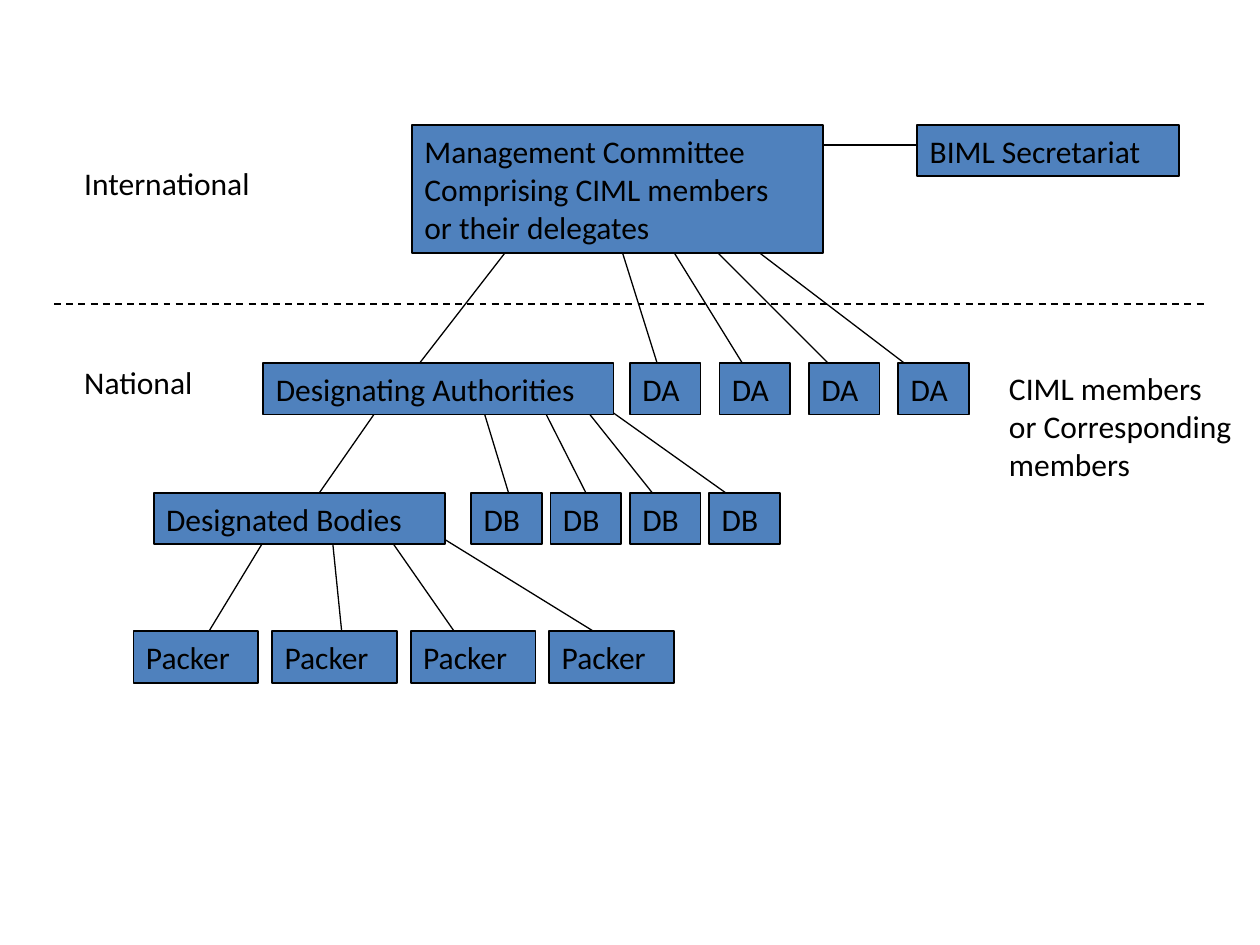
"""Build the organisation chart of international and national bodies."""
from lxml import etree
from pptx import Presentation
from pptx.dml.color import RGBColor
from pptx.enum.dml import MSO_LINE
from pptx.enum.shapes import MSO_CONNECTOR, MSO_SHAPE
from pptx.enum.text import MSO_ANCHOR, PP_ALIGN
from pptx.oxml.ns import qn
from pptx.util import Inches, Pt

STRAIGHT, RECTANGLE = MSO_CONNECTOR.STRAIGHT, MSO_SHAPE.RECTANGLE
DASH, LEFT, TOP, MIDDLE = MSO_LINE.DASH, PP_ALIGN.LEFT, MSO_ANCHOR.TOP, MSO_ANCHOR.MIDDLE

COLORS = {"box": "4F81BD", "ink": "000000"}
FONT, FONT_SIZE = "Calibri", 18
BOX_HEIGHT = 0.41

COMMITTEE = ("Management Committee", "Comprising CIML members", "or their delegates")
LEAD_BOXES = [
    (("Designating Authorities",), 2.09, 2.88, 2.78, BOX_HEIGHT),
    (("Designated Bodies",), 1.22, 3.91, 2.31, BOX_HEIGHT),
    (("BIML Secretariat",), 7.28, 0.99, 2.08, BOX_HEIGHT),
    (COMMITTEE, 3.27, 0.99, 3.26, 1.02),
]
# label, first left, pitch, top, width
BOX_ROWS = [
    ("DA", 5, 0.71, 2.88, 0.56),
    ("DB", 3.74, 0.63, 3.91, 0.56),
    ("Packer", 1.06, 1.1, 5.01, 0.99),
]
ROW_COUNT = 4
LABELS = [
    (("International",), 0.57, 1.25, 1.58, 0.4),
    (("National",), 0.57, 2.83, 1.12, 0.4),
    (("CIML members", "or Corresponding", "members"), 7.91, 2.88, 2.2, 1),
]
SECRETARIAT_LINK = (6.42, 1.15, 7.36, 1.15)
BORDER = (0.43, 2.41, 9.57, 2.41)
# upper y, lower y, (upper x, lower x) of each branch
BRANCHES = [
    (4.3, 5.09, [(2.09, 1.61), (2.64, 2.72), (3.11, 3.66)]),
    (4.22, 5.09, [(3.43, 4.84)]),
    (3.2, 3.99, [(3.03, 2.48), (3.82, 4.06), (4.29, 4.69), (4.61, 5.24), (4.76, 5.87)]),
    (1.94, 2.96, [(4.92, 5.24), (5.31, 5.94), (5.94, 7.28), (4.06, 3.27)]),
    (1.86, 2.96, [(5.55, 6.65)]),
]


def rgb(name):
    return RGBColor.from_string(COLORS[name])


def write(frame, lines, anchor):
    frame.word_wrap = True
    frame.vertical_anchor = anchor
    frame.text = "\n".join(lines)
    for paragraph in frame.paragraphs:
        paragraph.alignment = LEFT
        paragraph.font.name = FONT
        paragraph.font.size = Pt(FONT_SIZE)
        paragraph.font.color.rgb = rgb("ink")


def add_box(slide, lines, *place):
    box = slide.shapes.add_shape(RECTANGLE, *map(Inches, place))
    box.shadow.inherit = False
    box.fill.solid()
    box.fill.fore_color.rgb = rgb("box")
    box.line.color.rgb = rgb("ink")
    box.line.width = Pt(1)
    write(box.text_frame, lines, MIDDLE)


def add_line(slide, ends, width=0.75):
    link = slide.shapes.add_connector(STRAIGHT, *map(Inches, ends))
    link.line.color.rgb = rgb("ink")
    link.line.width = Pt(width)
    etree.SubElement(link._element.spPr, qn("a:effectLst"))
    return link


def main():
    deck = Presentation()
    deck.slide_width, deck.slide_height = Inches(10), Inches(7.5)
    slide = deck.slides.add_slide(deck.slide_layouts[6])

    add_line(slide, SECRETARIAT_LINK)
    for upper, lower, branches in BRANCHES:
        for start, end in branches:
            add_line(slide, (start, upper, end, lower))

    for lead in LEAD_BOXES:
        add_box(slide, *lead)
    for label, left, pitch, top, width in BOX_ROWS:
        for column in range(ROW_COUNT):
            add_box(slide, (label,), left + column * pitch, top, width, BOX_HEIGHT)

    add_line(slide, BORDER, 1).line.dash_style = DASH
    for lines, *place in LABELS:
        label_box = slide.shapes.add_textbox(*map(Inches, place))
        write(label_box.text_frame, lines, TOP)

    deck.save("out.pptx")


if __name__ == "__main__":
    main()
